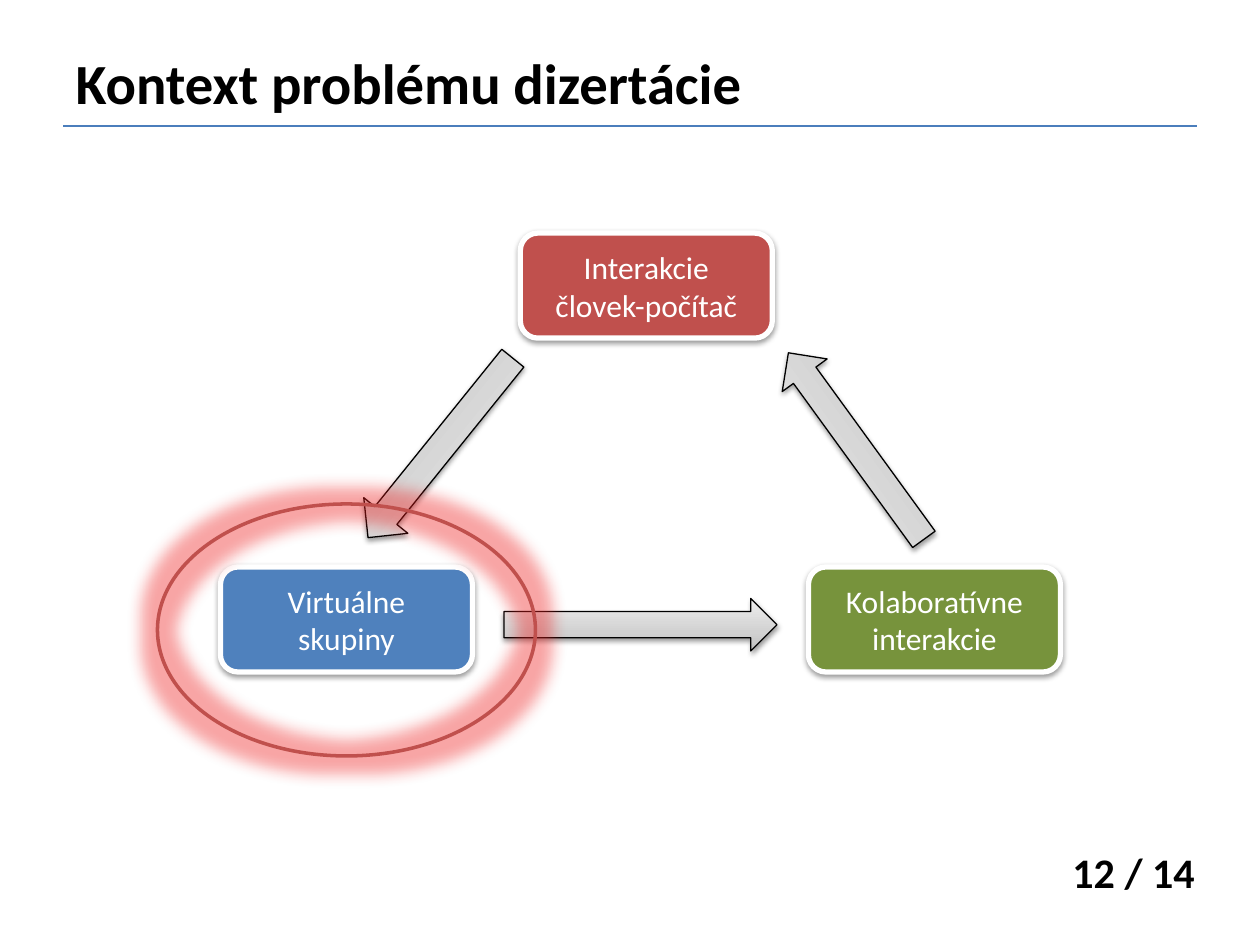
import copy

import lxml.etree
import pptx
import pptx.dml.color
import pptx.enum.shapes
import pptx.enum.text
import pptx.oxml.ns
import pptx.util

Pt = pptx.util.Pt
SHAPES = pptx.enum.shapes.MSO_SHAPE
ALIGN = pptx.enum.text.PP_ALIGN
ANCHOR = pptx.enum.text.MSO_ANCHOR

BLACK, WHITE, RED = "000000", "FFFFFF", "C0504D"
ARROW_STOPS = [(0, "BDBDBD"), (0.35, "D1D1D1"), (1, "EEEEEE")]
BOX_SIZE = (144, 60)
BOXES = [
    ("Interakcie\nčlovek-počítač", 297.36, 133.2, RED),
    ("Virtuálne skupiny", 126, 324, "4F81BD"),
    ("Kolaboratívne interakcie", 462, 324, "77933C"),
]
ARROWS = [  # left, top, width, height, rotation
    (185.76, 239.76, 131.76, 32.4, 128.9),
    (423.36, 239.04, 131.76, 31.68, 234),
    (288, 342, 156, 30, 0),
]


def color(hex_string):
    return pptx.dml.color.RGBColor.from_string(hex_string)


def points(*lengths):
    return [Pt(length) for length in lengths]


def add_effect(shape, kind, effect_color, opacity, **attributes):
    """Give the shape one effect, such as glow or outerShdw; opacity is in percent."""
    properties = shape._element.spPr
    effects = properties.find(pptx.oxml.ns.qn("a:effectLst"))
    if effects is None:
        effects = lxml.etree.SubElement(properties, pptx.oxml.ns.qn("a:effectLst"))
    effect = lxml.etree.SubElement(effects, pptx.oxml.ns.qn("a:" + kind))
    for name, value in attributes.items():
        effect.set(name, str(value))
    rgb = lxml.etree.SubElement(effect, pptx.oxml.ns.qn("a:srgbClr"), val=effect_color)
    lxml.etree.SubElement(rgb, pptx.oxml.ns.qn("a:alpha"), val=str(opacity * 1000))


def add_shadow(shape):
    add_effect(shape, "outerShdw", BLACK, 38, blurRad=Pt(3.1), dist=Pt(1.6),
               dir=90 * 60000, rotWithShape=0)


def write_text(text_frame, text, size, text_color, alignment, bold=False):
    paragraph = text_frame.paragraphs[0]
    paragraph.text = text
    paragraph.alignment = alignment
    font_format = {"name": "Calibri", "size": Pt(size), "bold": bold}
    for name, value in font_format.items():
        setattr(paragraph.font, name, value)
        for run in paragraph.runs:
            setattr(run.font, name, value)
    for run in paragraph.runs:
        run.font.color.rgb = color(text_color)


def add_outlined_shape(slide, kind, bounds, line_color, line_width):
    shape = slide.shapes.add_shape(kind, *points(*bounds))
    shape.shadow.inherit = False
    shape.line.color.rgb = color(line_color)
    shape.line.width = Pt(line_width)
    return shape


def set_title(slide, text):
    title = slide.shapes.title
    bounds = dict(zip(("left", "top", "width", "height"), points(36, 21.6, 648, 50.4)))
    for name, value in bounds.items():
        setattr(title, name, value)
    frame_format = {"vertical_anchor": ANCHOR.MIDDLE, "word_wrap": True,
                    "auto_size": pptx.enum.text.MSO_AUTO_SIZE.NONE}
    for name, value in frame_format.items():
        setattr(title.text_frame, name, value)
    write_text(title.text_frame, text, 32.4, BLACK, ALIGN.LEFT, bold=True)


def add_title_rule(slide):
    rule = slide.shapes.add_connector(
        pptx.enum.shapes.MSO_CONNECTOR.STRAIGHT, *points(36, 72, 684, 72))
    rule.line.color.rgb = color("4B7EBC")
    rule.line.width = Pt(0.75)
    lxml.etree.SubElement(rule._element.spPr, pptx.oxml.ns.qn("a:effectLst"))


def add_page_number(slide, text):
    box = slide.shapes.add_textbox(*points(599.04, 480.24, 90.72, 36))
    box.text_frame.word_wrap = True
    box.text_frame.auto_size = pptx.enum.text.MSO_AUTO_SIZE.SHAPE_TO_FIT_TEXT
    write_text(box.text_frame, text, 24, BLACK, ALIGN.RIGHT, bold=True)


def add_box(slide, text, left, top, fill_color):
    box = add_outlined_shape(slide, SHAPES.ROUNDED_RECTANGLE,
                             (left, top, *BOX_SIZE), WHITE, 3)
    box.fill.solid()
    box.fill.fore_color.rgb = color(fill_color)
    add_shadow(box)
    box.text_frame.word_wrap = True
    box.text_frame.vertical_anchor = ANCHOR.MIDDLE
    write_text(box.text_frame, text, 18, WHITE, ALIGN.CENTER)


def add_arrow(slide, left, top, width, height, rotation):
    arrow = add_outlined_shape(slide, SHAPES.RIGHT_ARROW,
                               (left, top, width, height), BLACK, 0.75)
    arrow.rotation = rotation
    arrow.fill.gradient()
    arrow.fill.gradient_angle = 90
    stop_list = arrow._element.spPr.find(".//" + pptx.oxml.ns.qn("a:gsLst"))
    stop_list.append(copy.deepcopy(stop_list[-1]))
    for stop, (position, stop_color) in zip(arrow.fill.gradient_stops, ARROW_STOPS):
        stop.position = position
        stop.color.rgb = color(stop_color)
    add_shadow(arrow)


def add_highlight(slide):
    ellipse = add_outlined_shape(slide, SHAPES.OVAL, (90, 288, 216, 144), RED, 2)
    ellipse.fill.background()
    add_effect(ellipse, "glow", "EE1E1E", 40, rad=Pt(18))


def main():
    presentation = pptx.Presentation()
    presentation.slide_width, presentation.slide_height = points(720, 540)
    slide = presentation.slides.add_slide(presentation.slide_layouts[5])
    add_title_rule(slide)
    add_page_number(slide, "12 / 14")
    set_title(slide, "Kontext problému dizertácie")
    for box in BOXES:
        add_box(slide, *box)
    for arrow in ARROWS:
        add_arrow(slide, *arrow)
    add_highlight(slide)
    presentation.save("out.pptx")


if __name__ == "__main__":
    main()
